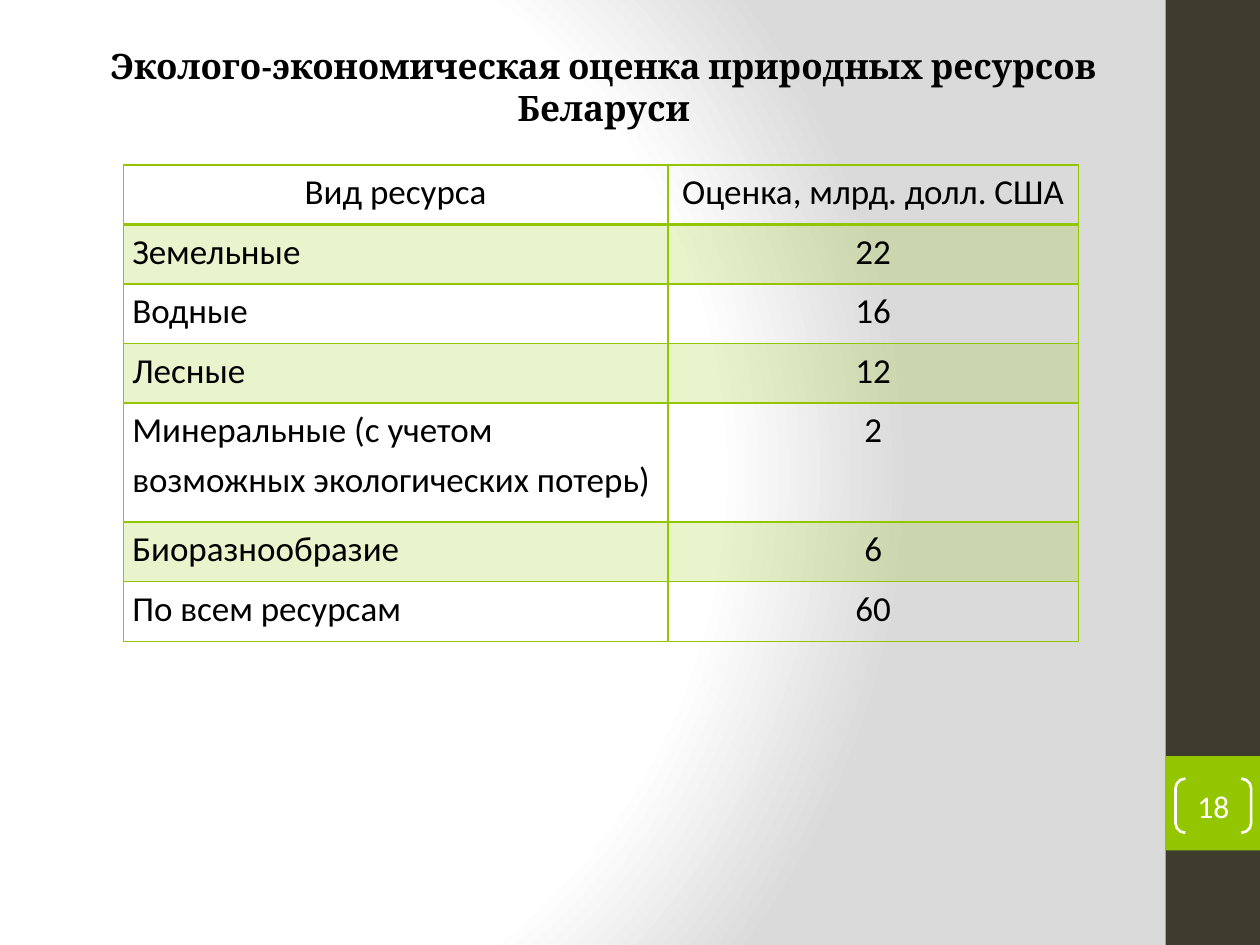
import lxml.etree
import pptx
import pptx.dml.color
import pptx.enum.shapes
import pptx.enum.text
import pptx.oxml
import pptx.oxml.ns
import pptx.util

Inches = pptx.util.Inches
Pt = pptx.util.Pt
RGB = pptx.dml.color.RGBColor
qn = pptx.oxml.ns.qn
Shape = pptx.enum.shapes.MSO_SHAPE
Align = pptx.enum.text.PP_ALIGN
Anchor = pptx.enum.text.MSO_ANCHOR

GREEN = RGB(0x94, 0xC6, 0x00)
DARK = RGB(0x3E, 0x3D, 0x2D)
BLACK = RGB(0, 0, 0)
WHITE = RGB(0xFF, 0xFF, 0xFF)
GREY = RGB(0xDA, 0xDA, 0xDA)

TITLE = "Эколого-экономическая оценка природных ресурсов Беларуси"
ROWS = [
    ("Вид ресурса", "Оценка, млрд. долл. США"),
    ("Земельные", "22"),
    ("Водные", "16"),
    ("Лесные", "12"),
    ("Минеральные (с учетом возможных экологических потерь)", "2"),
    ("Биоразнообразие", "6"),
    ("По всем ресурсам", "60"),
]
SHARES = [1, 1, 1, 1, 2, 1, 1]
SPLIT = 0.57


def apply(item, vals):
    """Set each attribute named in a dict of format values."""
    for name, val in vals.items():
        setattr(item, name, val)


def write(frame, text, font, para):
    """Fill a text frame with one formatted paragraph."""
    line = frame.paragraphs[0]
    apply(line, para)
    run = line.add_run()
    run.text = text
    color = font["color"]
    apply(run.font, {key: val for key, val in font.items() if key != "color"})
    run.font.color.rgb = color


def add_back(slide):
    """Give the slide a round gradient background."""
    slide.background.fill.gradient()
    grad = slide.element.find(".//" + qn("a:gradFill"))
    for child in list(grad):
        grad.remove(child)
    stops = lxml.etree.SubElement(grad, qn("a:gsLst"))
    for pos, color in ((0, WHITE), (75, WHITE), (100, GREY)):
        stop = lxml.etree.SubElement(stops, qn("a:gs"), pos=str(pos * 1000))
        lxml.etree.SubElement(stop, qn("a:srgbClr"), val=str(color))
    round_ = lxml.etree.SubElement(grad, qn("a:path"))
    round_.set("path", "circle")
    lxml.etree.SubElement(round_, qn("a:fillToRect"),
                          l="20000", t="50000", r="100000", b="50000")


def add_block(slide, color, box):
    """Add a plain filled rectangle."""
    block = slide.shapes.add_shape(Shape.RECTANGLE, *map(Inches, box))
    block.shadow.inherit = False
    block.fill.solid()
    block.fill.fore_color.rgb = color
    block.line.fill.background()


def add_side(slide, left, top, width, height):
    """Add the side band with its bracketed page number."""
    add_block(slide, DARK, (left, top, width, height))
    add_block(slide, GREEN, (left, top + 6, width, width))
    mark = slide.shapes.add_shape(
        Shape.DOUBLE_BRACKET, Inches(left + 0.08), Inches(top + 6.18),
        Inches(width - 0.15), Inches(0.43))
    mark.adjustments[0] = 0.18
    mark.shadow.inherit = False
    mark.fill.background()
    mark.line.color.rgb = WHITE
    mark.line.width = Pt(1.5)
    apply(mark.text_frame, {
        "margin_left": 0, "margin_right": 0, "margin_top": 0,
        "margin_bottom": 0, "vertical_anchor": Anchor.MIDDLE})
    write(mark.text_frame, "18",
          {"name": "Calibri", "size": Pt(18), "color": WHITE},
          {"alignment": Align.CENTER})


def add_title(slide, left, top, width, height):
    """Place and format the title placeholder."""
    title = slide.shapes.title
    apply(title, {"left": Inches(left), "top": Inches(top),
                  "width": Inches(width), "height": Inches(height)})
    apply(title.text_frame, {
        "word_wrap": True, "vertical_anchor": Anchor.MIDDLE,
        "auto_size": pptx.enum.text.MSO_AUTO_SIZE.NONE})
    write(title.text_frame, TITLE,
          {"name": "Cambria", "size": Pt(20), "bold": True, "color": BLACK},
          {"alignment": Align.CENTER, "line_spacing": 1.0,
           "space_before": Pt(0)})


def add_edges(cell, widths):
    """Draw green cell borders with the given widths in points."""
    props = cell._tc.get_or_add_tcPr()
    for spot, (side, width) in enumerate(widths.items()):
        edge = pptx.oxml.parse_xml(
            f'<a:{side} {pptx.oxml.ns.nsdecls("a")} w="{Pt(width)}">'
            f'<a:solidFill><a:srgbClr val="{GREEN}"/></a:solidFill>'
            f'</a:{side}>')
        props.insert(spot, edge)


def add_grid(slide, left, top, width, height):
    """Add the resource table with tinted odd rows."""
    grid = slide.shapes.add_table(
        len(ROWS), 2, *map(Inches, (left, top, width, height))).table
    apply(grid, {"first_row": False, "horz_banding": False})
    for col, share in zip(grid.columns, (SPLIT, 1 - SPLIT)):
        col.width = Inches(width * share)
    for i, (texts, share) in enumerate(zip(ROWS, SHARES)):
        grid.rows[i].height = Inches(height * share / sum(SHARES))
        for j, text in enumerate(texts):
            cell = grid.cell(i, j)
            apply(cell, {"margin_left": Inches(0.07), "margin_top": 0,
                         "margin_right": Inches(0.07), "margin_bottom": 0})
            mid = i == 0 or j == 1
            write(cell.text_frame, text,
                  {"name": "Calibri", "size": Pt(20), "color": BLACK},
                  {"alignment": Align.CENTER if mid else Align.LEFT,
                   "line_spacing": 1.15})
            if i % 2:
                cell.fill.solid()
                cell.fill.fore_color.rgb = GREEN
                tint = cell._tc.tcPr.find(".//" + qn("a:srgbClr"))
                lxml.etree.SubElement(tint, qn("a:alpha"), val="20000")
            else:
                cell.fill.background()
            add_edges(cell, {"lnL": 1, "lnR": 1,
                             "lnT": 2 if i == 1 else 1,
                             "lnB": 2 if i == 0 else 1})


def main():
    """Build and save the slide."""
    deck = pptx.Presentation()
    apply(deck, {"slide_width": Inches(10), "slide_height": Inches(7.5)})
    slide = deck.slides.add_slide(deck.slide_layouts[5])
    add_back(slide)
    add_side(slide, 9.25, 0, 0.75, 7.5)
    add_grid(slide, 0.98, 1.31, 7.58, 3.78)
    add_title(slide, 0.43, 0.47, 8.72, 0.44)
    deck.save("out.pptx")


if __name__ == "__main__":
    main()
